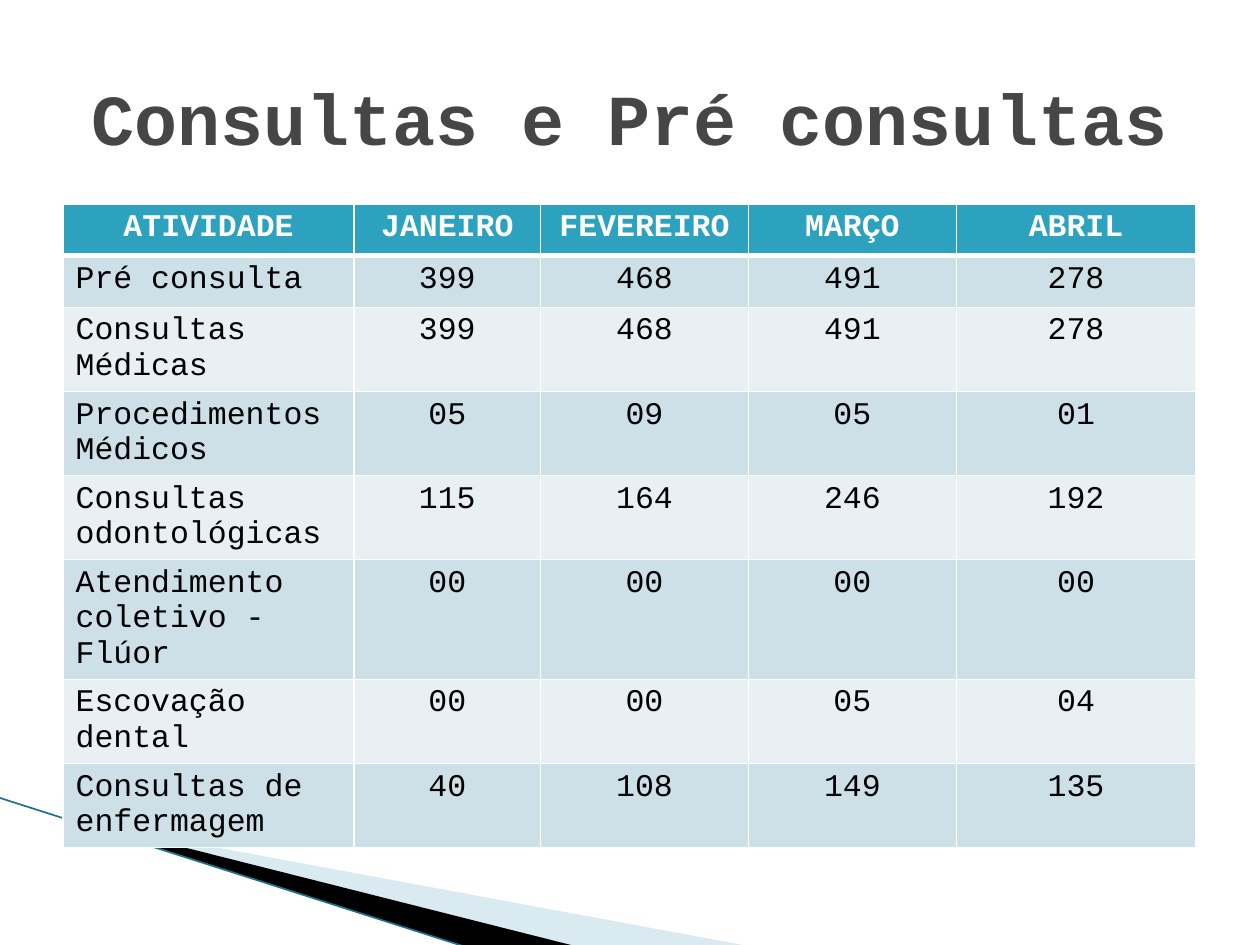
from dataclasses import dataclass

from lxml.etree import SubElement
from pptx import Presentation
from pptx.dml.color import RGBColor as RGB
from pptx.enum.shapes import MSO_CONNECTOR as CONN
from pptx.enum.text import MSO_ANCHOR as ANCHOR, MSO_AUTO_SIZE as AUTO, PP_ALIGN as ALIGN
from pptx.oxml import parse_xml
from pptx.oxml.ns import nsdecls, qn
from pptx.util import Inches, Pt


@dataclass(frozen=True)
class Theme:
    """Colours, font and type sizes of the slide."""
    font: str = "Courier New"
    title_size: int = 41
    cell_size: int = 18
    title: str = "464646"
    text: str = "000000"
    white: str = "FFFFFF"
    header: str = "2DA2BF"
    bands: tuple[str, str] = ("CDE0E8", "E8F0F4")
    wedge: str = "A0CBDC"
    line: str = "1B7489"


@dataclass(frozen=True)
class Wedge:
    """A filled corner outline, with points in inches."""
    points: tuple[tuple[float, float], ...]
    color: str
    alpha: int = 100


@dataclass(frozen=True)
class Activity:
    """One table row: an activity and its monthly counts."""
    name: str
    counts: tuple[str, ...]


THEME = Theme()
WEDGES = (
    Wedge(((0.55, 6.51), (5.95, 7.51), (4.56, 7.51), (0.55, 6.5)), THEME.wedge, 40),
    Wedge(((0.53, 6.49), (4.57, 7.51), (3.72, 7.52), (0.54, 6.5)), THEME.text),
)
HEADER = ("ATIVIDADE", "JANEIRO", "FEVEREIRO", "MARÇO", "ABRIL")
ACTIVITIES = (
    Activity("Pré consulta", ("399", "468", "491", "278")),
    Activity("Consultas Médicas", ("399", "468", "491", "278")),
    Activity("Procedimentos Médicos", ("05", "09", "05", "01")),
    Activity("Consultas odontológicas", ("115", "164", "246", "192")),
    Activity("Atendimento coletivo - Flúor", ("00", "00", "00", "00")),
    Activity("Escovação dental", ("00", "00", "05", "04")),
    Activity("Consultas de enfermagem", ("40", "108", "149", "135")),
)
COLUMN_WIDTHS = (2.31, 1.48, 1.65, 1.65, 1.9)
ROW_HEIGHT = 0.41


def write(p, text: str, size: int, color: str, bold: bool, align: ALIGN) -> None:
    """Add one formatted run to a paragraph."""
    p.alignment = align
    r = p.add_run()
    r.text = text
    r.font.name = THEME.font
    r.font.size = Pt(size)
    r.font.bold = bold
    r.font.color.rgb = RGB.from_string(color)


def draw_wedge(s, wedge: Wedge) -> None:
    """Draw a corner outline with its transparency."""
    start, *rest = [(Inches(x), Inches(y)) for x, y in wedge.points]
    builder = s.shapes.build_freeform(*start, scale=1.0)
    builder.add_line_segments(rest, close=True)
    sp = builder.convert_to_shape()
    sp.shadow.inherit = False
    sp.line.fill.background()
    sp.fill.solid()
    sp.fill.fore_color.rgb = RGB.from_string(wedge.color)
    if wedge.alpha < 100:
        color = sp.fill._xPr.find(qn("a:solidFill"))[0]
        SubElement(color, qn("a:alpha")).set("val", str(wedge.alpha * 1000))


def draw_corner_line(s) -> None:
    """Draw the thin slanted line along the corner."""
    line = s.shapes.add_connector(
        CONN.STRAIGHT, Inches(-0.01), Inches(6.33), Inches(3.71), Inches(7.52))
    line.line.color.rgb = RGB.from_string(THEME.line)
    line.line.width = Pt(0.95)
    SubElement(line._element.spPr, qn("a:effectLst"))


def set_borders(cell, top: int, bottom: int) -> None:
    """Give a cell white borders, with top and bottom widths in points."""
    tc_pr = cell._tc.get_or_add_tcPr()
    for i, (side, width) in enumerate({"L": 1, "R": 1, "T": top, "B": bottom}.items()):
        tc_pr.insert(i, parse_xml(
            f'<a:ln{side} {nsdecls("a")} w="{Pt(width)}"><a:solidFill>'
            f'<a:srgbClr val="{THEME.white}"/></a:solidFill></a:ln{side}>'))


def draw_table(s) -> None:
    """Draw the monthly activity table."""
    rows = [HEADER] + [(a.name, *a.counts) for a in ACTIVITIES]
    table = s.shapes.add_table(
        len(rows), len(HEADER), Inches(0.5), Inches(1.62),
        Inches(sum(COLUMN_WIDTHS)), Inches(ROW_HEIGHT * len(rows))).table
    for column, width in zip(table.columns, COLUMN_WIDTHS):
        column.width = Inches(width)
    for i, values in enumerate(rows):
        table.rows[i].height = Inches(ROW_HEIGHT)
        is_header = i == 0
        fill = THEME.header if is_header else THEME.bands[(i - 1) % 2]
        color = THEME.white if is_header else THEME.text
        for j, value in enumerate(values):
            cell = table.cell(i, j)
            cell.fill.solid()
            cell.fill.fore_color.rgb = RGB.from_string(fill)
            set_borders(cell, 3 if i == 1 else 1, 3 if is_header else 1)
            align = ALIGN.CENTER if is_header or j else ALIGN.LEFT
            write(cell.text_frame.paragraphs[0], value, THEME.cell_size, color, is_header, align)


def draw_title(s) -> None:
    """Place and fill the title placeholder."""
    title = s.shapes.title
    title.left, title.top = Inches(0.5), Inches(0.3)
    title.width, title.height = Inches(9), Inches(1.25)
    tf = title.text_frame
    tf.word_wrap = True
    tf.auto_size = AUTO.NONE
    tf.vertical_anchor = ANCHOR.MIDDLE
    write(tf.paragraphs[0], "Consultas e Pré consultas", THEME.title_size,
          THEME.title, True, ALIGN.CENTER)


def main() -> None:
    """Build and save the slide."""
    prs = Presentation()
    prs.slide_width, prs.slide_height = Inches(10), Inches(7.5)
    s = prs.slides.add_slide(prs.slide_layouts.get_by_name("Title Only"))
    for wedge in WEDGES:
        draw_wedge(s, wedge)
    draw_corner_line(s)
    draw_table(s)
    draw_title(s)
    prs.save("out.pptx")


if __name__ == "__main__":
    main()
